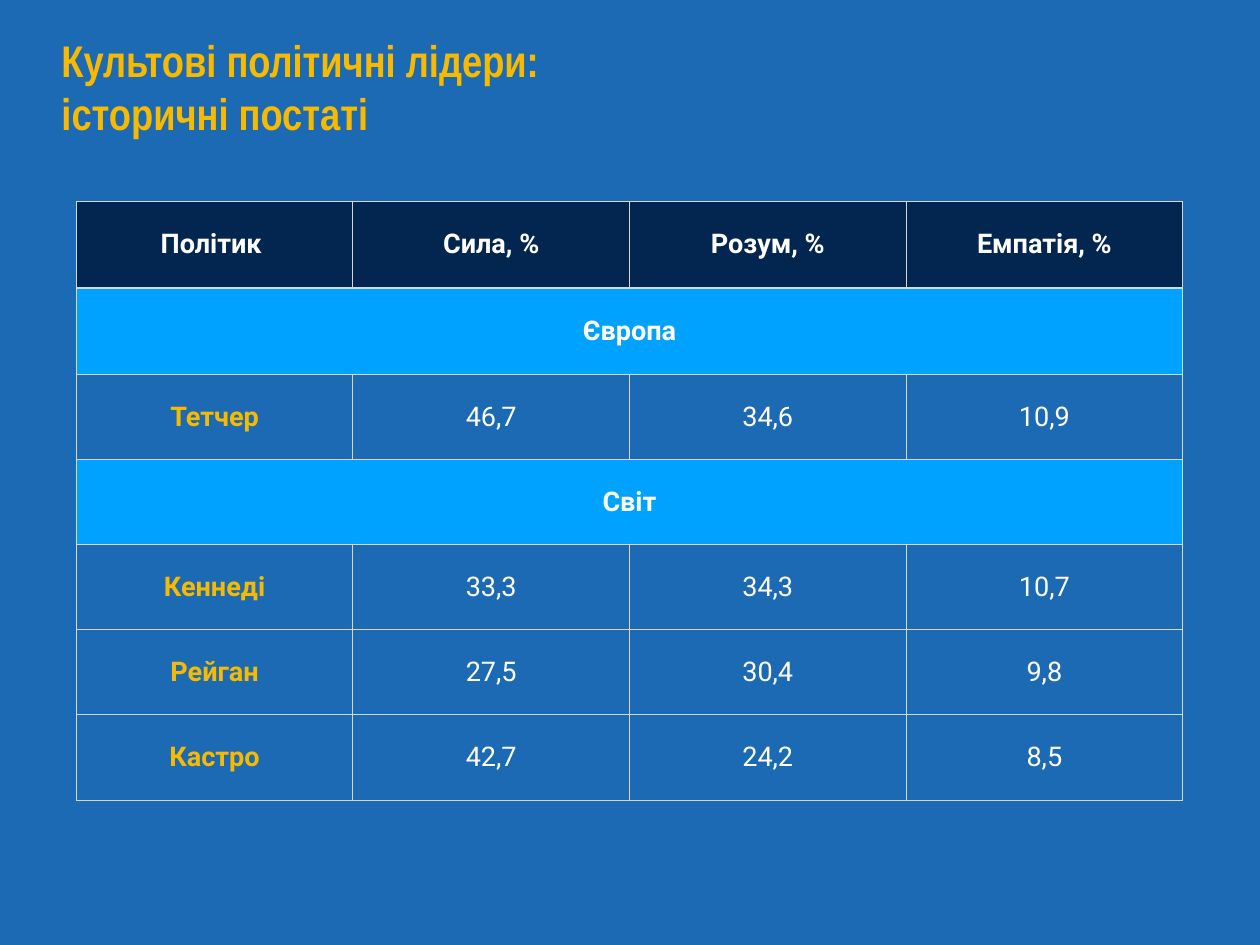
from pptx import Presentation
from pptx.dml.color import RGBColor
from pptx.enum.text import MSO_ANCHOR, MSO_AUTO_SIZE, PP_ALIGN
from pptx.oxml import parse_xml
from pptx.oxml.ns import nsdecls
from pptx.util import Pt

TOP, MIDDLE = MSO_ANCHOR.TOP, MSO_ANCHOR.MIDDLE
LEFT, CENTER = PP_ALIGN.LEFT, PP_ALIGN.CENTER
NO_AUTOFIT = MSO_AUTO_SIZE.NONE

BLUE = RGBColor(0x1B, 0x6A, 0xB3)
NAVY = RGBColor(0x03, 0x26, 0x50)
AZURE = RGBColor(0x00, 0xA2, 0xFF)
GOLD = RGBColor(0xF8, 0xBA, 0x00)
WHITE = RGBColor(0xFF, 0xFF, 0xFF)
GRID = RGBColor(0xD6, 0xD7, 0xD6)

INSET = Pt(4.5)
MARGINS = {"margin_left": INSET, "margin_top": INSET,
           "margin_right": INSET, "margin_bottom": INSET}
TITLE_BOX = {"left": Pt(45.4), "top": Pt(22.3), "width": Pt(930), "height": Pt(95)}
TITLE_FRAME = {**MARGINS, "word_wrap": True, "auto_size": NO_AUTOFIT, "vertical_anchor": TOP}
TITLE_FONT = {"name": "Arial Narrow", "size": Pt(36), "bold": True}
CELL_FORMAT = {**MARGINS, "vertical_anchor": MIDDLE}
CELL_FONT = {"name": "Roboto", "size": Pt(22)}
PLAIN_TABLE = {"first_row": False, "horz_banding": False}

LEADERS = [
    ("Політик ", "Сила, %", "Розум, %", "Емпатія, %"),
    ("Європа",),
    ("Тетчер", "46,7", "34,6", "10,9"),
    ("Світ",),
    ("Кеннеді", "33,3", "34,3", "10,7"),
    ("Рейган", "27,5", "30,4", "9,8"),
    ("Кастро", "42,7", "24,2", "8,5"),
]
COLUMN_COUNT = len(LEADERS[0])
COLUMN_WIDTH = Pt(224.8)
ROW_HEIGHTS = [Pt(70.5)] * 2 + [Pt(69.15)] * 5


def apply(target, values):
    for attribute, value in values.items():
        setattr(target, attribute, value)


def draw_borders(cell, widths):
    for side, width in widths.items():
        cell._tc.get_or_add_tcPr().append(parse_xml(
            f'<a:ln{side} {nsdecls("a")} w="{Pt(width)}"><a:solidFill>'
            f'<a:srgbClr val="{GRID}"/></a:solidFill></a:ln{side}>'))


prs = Presentation()
prs.slide_width, prs.slide_height = Pt(1024), Pt(768)
slide = prs.slides.add_slide(prs.slide_layouts[5])
slide.background.fill.solid()
slide.background.fill.fore_color.rgb = BLUE

title = slide.shapes.title
apply(title, TITLE_BOX)
apply(title.text_frame, TITLE_FRAME)
title.text_frame.text = "Культові політичні лідери: \vісторичні постаті"
heading = title.text_frame.paragraphs[0]
heading.alignment = LEFT
apply(heading.font, TITLE_FONT)
heading.font.color.rgb = GOLD

ratings = slide.shapes.add_table(
    len(LEADERS), COLUMN_COUNT, Pt(62), Pt(163.5),
    COLUMN_WIDTH * COLUMN_COUNT, sum(ROW_HEIGHTS)).table
apply(ratings, PLAIN_TABLE)
for column in ratings.columns:
    column.width = COLUMN_WIDTH

for r, (entries, height) in enumerate(zip(LEADERS, ROW_HEIGHTS)):
    ratings.rows[r].height = height
    is_header, is_region = r == 0, len(entries) == 1
    band = NAVY if is_header else AZURE if is_region else None
    borders = {"L": 1, "R": 1, "T": 2 if r == 1 else 1, "B": 2 if is_header else 1}
    for c in range(COLUMN_COUNT):
        cell = ratings.cell(r, c)
        apply(cell, CELL_FORMAT)
        draw_borders(cell, borders)
        if band:
            cell.fill.solid()
            cell.fill.fore_color.rgb = band
        else:
            cell.fill.background()
    if is_region:
        ratings.cell(r, 0).merge(ratings.cell(r, COLUMN_COUNT - 1))
    for c, entry in enumerate(entries):
        cell = ratings.cell(r, c)
        cell.text = entry
        line = cell.text_frame.paragraphs[0]
        line.alignment = CENTER
        apply(line.font, CELL_FONT)
        line.font.bold = bool(band) or c == 0
        line.font.color.rgb = GOLD if c == 0 and not band else WHITE

prs.save("out.pptx")
